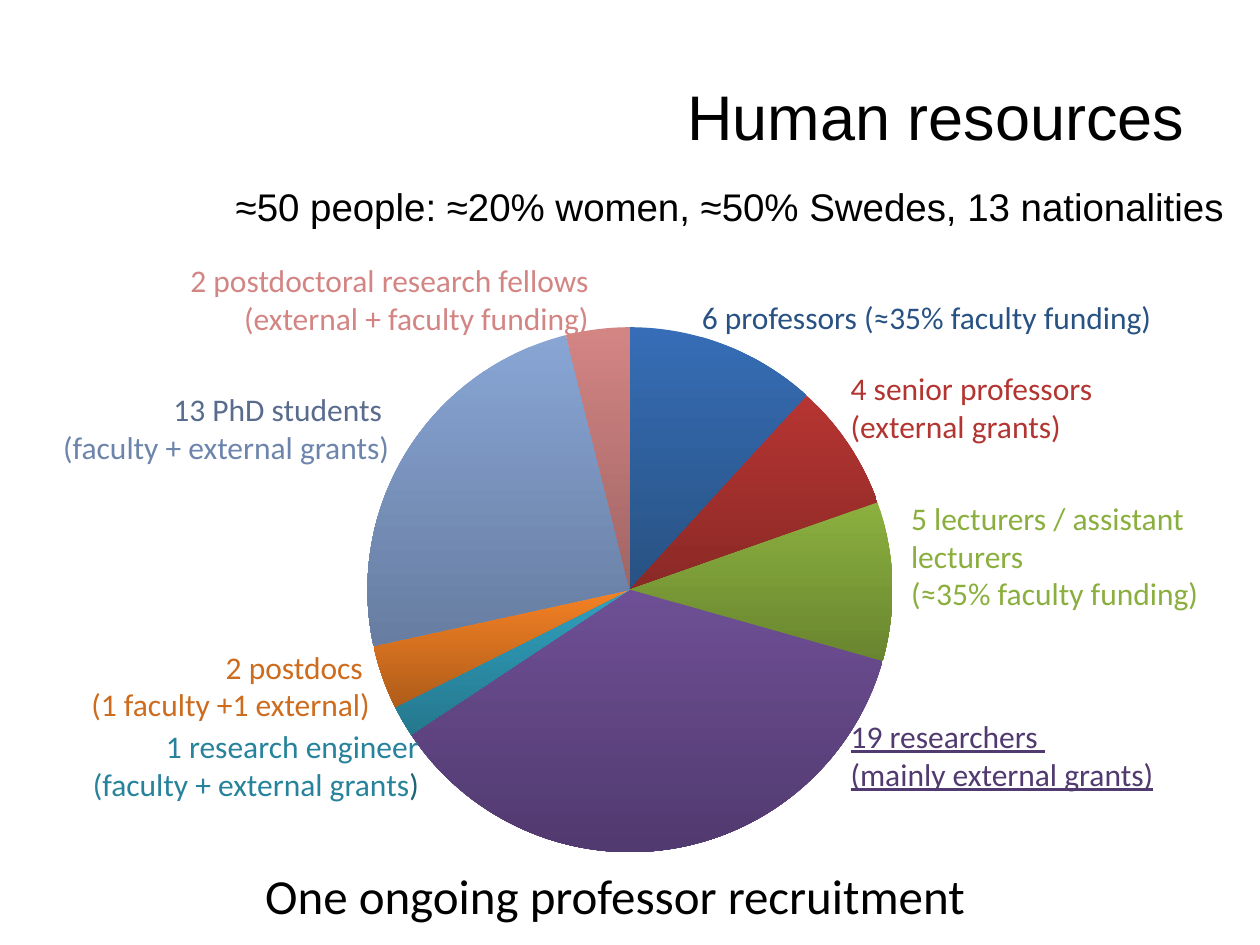
from lxml.etree import SubElement
from pptx import Presentation
from pptx.chart.data import CategoryChartData
from pptx.dml.color import RGBColor
from pptx.enum.chart import XL_CHART_TYPE
from pptx.enum.text import MSO_ANCHOR, PP_ALIGN
from pptx.oxml import parse_xml
from pptx.oxml.ns import nsdecls, qn
from pptx.util import Pt

BLACK = RGBColor(0, 0, 0)
NAVY = RGBColor(0x28, 0x52, 0x83)
RED = RGBColor(0xB3, 0x35, 0x31)
GREEN = RGBColor(0x8A, 0xAF, 0x3E)
PLUM = RGBColor(0x51, 0x3A, 0x6F)
TEAL = RGBColor(0x26, 0x83, 0x9B)
PINE = RGBColor(0x1E, 0x63, 0x76)
RUST = RGBColor(0xCD, 0x6C, 0x1E)
SLATE = RGBColor(0x59, 0x6C, 0x8D)
STEEL = RGBColor(0x6D, 0x85, 0xAC)
ROSE = RGBColor(0xD3, 0x85, 0x84)

SLICES = [
    (12, RGBColor(0x36, 0x6D, 0xB6), NAVY),
    (8, RGBColor(0xB6, 0x35, 0x32), RGBColor(0x8A, 0x29, 0x26)),
    (10, RGBColor(0x8B, 0xB0, 0x3F), RGBColor(0x69, 0x85, 0x2F)),
    (37, RGBColor(0x6E, 0x4F, 0x95), PLUM),
    (2, RGBColor(0x31, 0xA0, 0xBD), RGBColor(0x24, 0x78, 0x8E)),
    (4, RGBColor(0xF4, 0x81, 0x24), RGBColor(0xB0, 0x5D, 0x1A)),
    (25, RGBColor(0x88, 0xA5, 0xD4), RGBColor(0x67, 0x7D, 0xA1)),
    (4, ROSE, RGBColor(0xA0, 0x65, 0x64)),
]

LEFT, RIGHT = PP_ALIGN.LEFT, PP_ALIGN.RIGHT
LABELS = [
    ((394, 167, 276, 29), LEFT, False,
     [[("6 professors (≈35% faculty funding)", NAVY)]]),
    ((479, 207.5, 204, 51), LEFT, True,
     [[("4 senior professors (external grants)", RED)]]),
    ((513.5, 281.5, 193, 73), LEFT, True,
     [[("5 lecturers / assistant lecturers", GREEN)],
      [("(≈35% faculty funding)", GREEN)]]),
    ((479, 406, 199, 51), LEFT, True,
     [[("19 researchers ", PLUM)], [("(mainly external grants)", PLUM)]]),
    ((14.5, 366.5, 204, 51), RIGHT, True,
     [[("2 postdocs ", RUST)], [("(1 faculty +1 external)", RUST)]]),
    ((42.5, 412, 204, 51), RIGHT, True,
     [[("1 research engineer (faculty + external grants", TEAL),
       (")", PINE)]]),
    ((14.5, 219.5, 215, 73), RIGHT, True,
     [[("13 PhD students ", SLATE)],
      [("(faculty + external grants)", STEEL)]]),
    ((54, 145.5, 289.5, 51), RIGHT, True,
     [[("2 postdoctoral research fellows", ROSE)],
      [("(external + faculty funding)", ROSE)]]),
]


def place(shape, box):
    shape.left, shape.top, shape.width, shape.height = map(Pt, box)


def write(para, text, face, size, color):
    run = para.add_run()
    run.text = text
    run.font.name = face
    run.font.size = Pt(size)
    run.font.color.rgb = color
    return run


def head(slide, box):
    title = slide.shapes.title
    place(title, box)
    title.text_frame.vertical_anchor = MSO_ANCHOR.MIDDLE
    para = title.text_frame.paragraphs[0]
    para.alignment = RIGHT
    write(para, "Human resources", "Arial", 36, BLACK)


def lead(slide, box):
    body = slide.placeholders[1]
    place(body, box)
    para = body.text_frame.paragraphs[0]
    props = para._p.get_or_add_pPr()
    props.set("marL", "0")
    props.set("indent", "0")
    SubElement(props, qn("a:buNone"))
    para.space_before = Pt(0)
    write(para, "≈50 people: ≈20% women, ≈50% Swedes, 13 nationalities",
          "Arial", 22, BLACK)


def pie(slide, box):
    data = CategoryChartData()
    data.categories = [str(n + 1) for n in range(len(SLICES))]
    data.add_series("Series 1", [part[0] for part in SLICES])
    frame = slide.shapes.add_chart(XL_CHART_TYPE.PIE, *map(Pt, box), data)
    chart = frame.chart
    chart.has_title = False
    chart.has_legend = False
    chart.font.name = "Calibri"
    chart.font.size = Pt(18)
    chart.font.color.rgb = BLACK
    plot = chart.plots[0]
    plot.vary_by_categories = True
    for index, (_, top, base) in enumerate(SLICES):
        fill = plot.series[0].points[index].format.fill
        fill.gradient()
        fill.gradient_angle = 270
        for stop, color, at in zip(fill.gradient_stops, (top, base), (0, 1)):
            stop.color.rgb = color
            stop.position = at
    area = chart._chartSpace.chart.plotArea
    for old in area.findall(qn("c:layout")):
        area.remove(old)
    side = 300
    wide, high = side / box[2], side / box[3]
    area.insert(0, parse_xml(
        f'<c:layout {nsdecls("c")}><c:manualLayout>'
        '<c:layoutTarget val="inner"/>'
        '<c:xMode val="edge"/><c:yMode val="edge"/>'
        f'<c:x val="{(1 - wide) / 2}"/><c:y val="{(1 - high) / 2}"/>'
        f'<c:w val="{wide}"/><c:h val="{high}"/>'
        '</c:manualLayout></c:layout>'))


def label(slide, box, align, wrap, lines, size=18):
    frame = slide.shapes.add_textbox(*map(Pt, box)).text_frame
    frame.word_wrap = wrap
    for index, runs in enumerate(lines):
        para = frame.add_paragraph() if index else frame.paragraphs[0]
        para.alignment = align
        for text, color in runs:
            run = write(para, text, "Calibri", size, color)
            if color == PLUM:
                run.font.underline = True


def main():
    deck = Presentation()
    deck.slide_width, deck.slide_height = Pt(720), Pt(540)
    slide = deck.slides.add_slide(deck.slide_layouts[1])
    pie(slide, (120, 177, 480, 320))
    head(slide, (150.5, 21, 533.5, 90))
    lead(slide, (127.5, 101, 601, 73))
    for item in LABELS:
        label(slide, *item)
    label(slide, (144.5, 491, 420.5, 41), LEFT, False,
          [[("One ongoing professor recruitment", BLACK)]], 28)
    deck.save("out.pptx")


if __name__ == "__main__":
    main()
